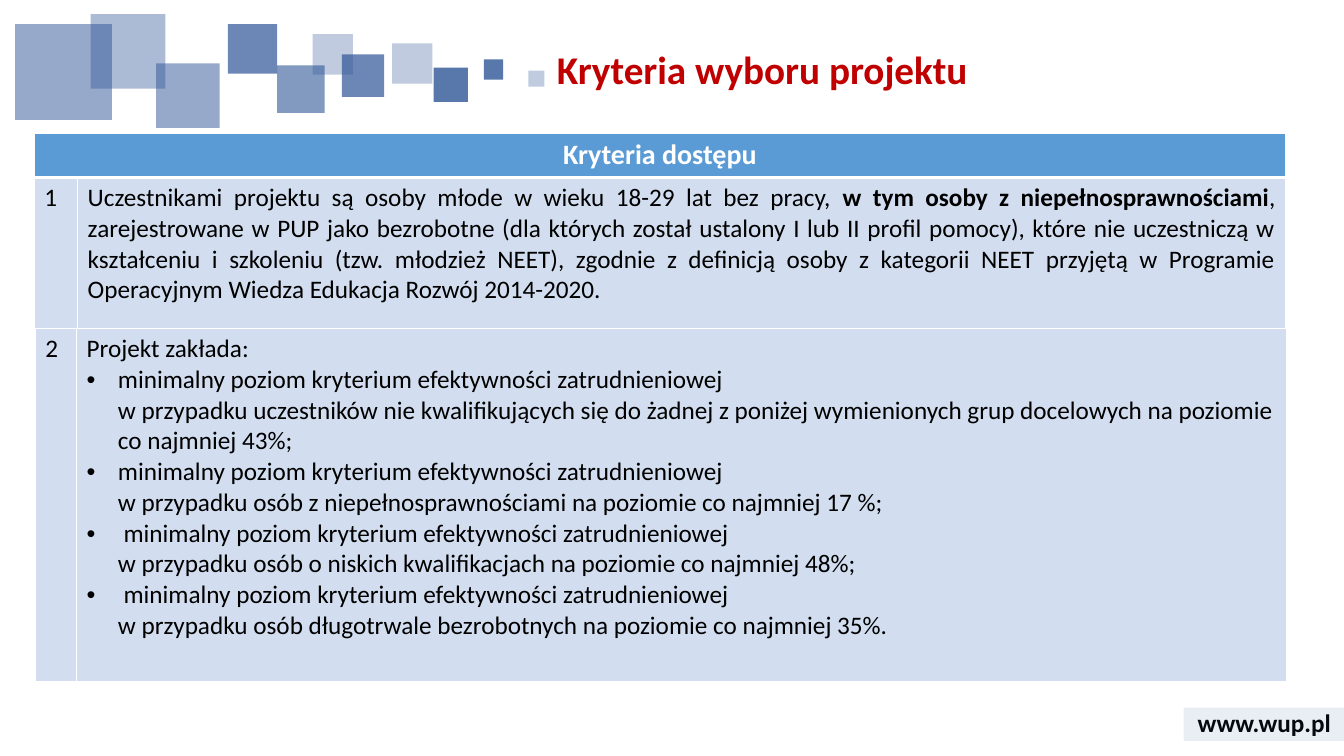
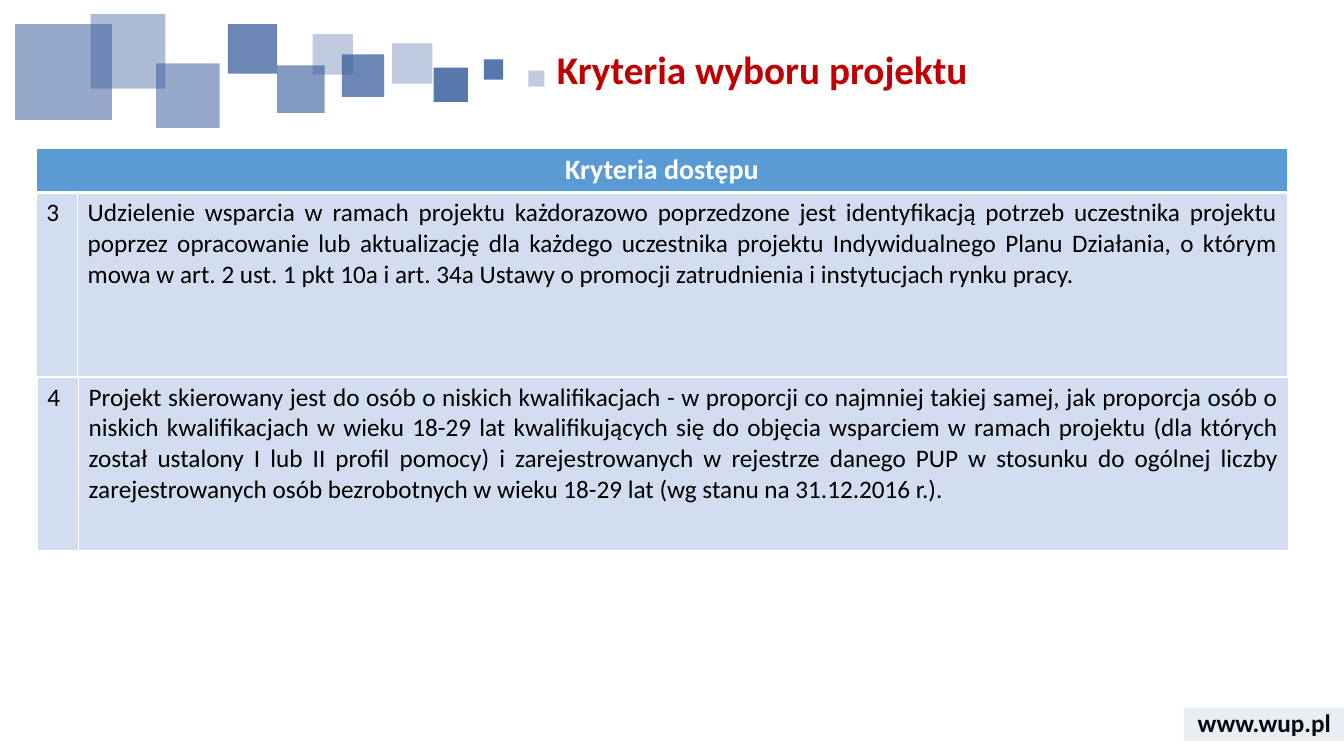
"""Builds two slides of project selection criteria."""
import dataclasses

import pptx
import pptx.dml.color
import pptx.enum.shapes
import pptx.enum.text
import pptx.oxml.ns
import pptx.util

qn = pptx.oxml.ns.qn
align = pptx.enum.text.PP_ALIGN
anchor = pptx.enum.text.MSO_ANCHOR
rect = pptx.enum.shapes.MSO_SHAPE.RECTANGLE
unit = pptx.util.Inches(0.1)


@dataclasses.dataclass
class Theme:
    face: str = "Calibri"
    red: str = "C00000"
    navy: str = "2F5597"
    blue: str = "5B9BD5"
    pale: str = "D2DEEF"
    white: str = "FFFFFF"
    black: str = "000000"
    title: int = 28
    head: int = 20
    body: int = 18


theme = Theme()


def add(root, tag, **attrs):
    node = root.makeelement(qn(tag), attrs)
    root.append(node)
    return node


def write(par, text, size, color, bold=False, side=align.LEFT):
    par.alignment = side
    for part, chunk in enumerate(text.split("|")):
        for row, line in enumerate(chunk.split("\n")):
            if row:
                par.add_line_break()
            run = par.add_run()
            run.text = line
            form = {"name": theme.face, "size": pptx.util.Pt(size), "bold": bold or part % 2 == 1}
            for key, value in form.items():
                setattr(run.font, key, value)
            run.font.color.rgb = pptx.dml.color.RGBColor.from_string(color)


squares = [
    (38.9, 4.3, 4, 4, 30),
    (43, 6.7, 3.4, 3.4, 80),
    (33.9, 5.4, 4.2, 4.2, 70),
    (1.5, 2.4, 9.6, 9.5, 50),
    (27.5, 6.5, 4.7, 4.7, 60),
    (15.5, 6.3, 6.3, 6.4, 50),
    (9, 1.4, 7.4, 7.4, 40),
    (48, 5.9, 1.9, 2, 80),
    (22.6, 2.4, 4.9, 4.9, 70),
    (31, 3.4, 4, 4, 30),
    (52.4, 7, 1.6, 1.6, 30),
    (117.4, 70.2, 16, 3.3, 10),
]
head = "Kryteria dostępu"
goal = "minimalny poziom kryterium efektywności zatrudnieniowej \nw przypadku "
pages = [
    [
        (3.4, 13.2, 4.3, 119.8, [
            (4.3, head, []),
            (15.1, "1", ["Uczestnikami projektu są osoby młode w wieku 18-29 lat bez pracy, "
                         "|w tym osoby z niepełnosprawnościami|, zarejestrowane w PUP jako bezrobotne "
                         "(dla których został ustalony I lub II profil pomocy), które nie uczestniczą "
                         "w kształceniu i szkoleniu (tzw. młodzież NEET), zgodnie z definicją osoby "
                         "z kategorii NEET przyjętą w Programie Operacyjnym Wiedza Edukacja Rozwój "
                         "2014-2020."]),
        ]),
        (3.5, 32.6, 4.1, 120, [
            (35, "2", ["Projekt zakłada:",
                       goal + "uczestników nie kwalifikujących się do żadnej z poniżej wymienionych "
                              "grup docelowych na poziomie co najmniej 43%;",
                       goal + "osób z niepełnosprawnościami na poziomie co najmniej 17 %;",
                       " " + goal + "osób o niskich kwalifikacjach na poziomie co najmniej 48%;",
                       " " + goal + "osób długotrwale bezrobotnych na poziomie co najmniej 35%."]),
        ]),
    ],
    [
        (3.6, 14.7, 4.1, 120, [
            (4.3, head, []),
            (18.3, "3", ["Udzielenie wsparcia w ramach projektu każdorazowo poprzedzone jest "
                         "identyfikacją potrzeb uczestnika projektu poprzez opracowanie lub "
                         "aktualizację dla każdego uczestnika projektu Indywidualnego Planu "
                         "Działania, o którym mowa w art. 2 ust. 1 pkt 10a i art. 34a Ustawy "
                         "o promocji zatrudnienia i instytucjach rynku pracy."]),
        ]),
        (3.7, 37.4, 4.1, 120, [
            (17.2, "4", ["Projekt skierowany jest do osób o niskich kwalifikacjach - w proporcji "
                         "co najmniej takiej samej, jak proporcja osób o niskich kwalifikacjach "
                         "w wieku 18-29 lat kwalifikujących się do objęcia wsparciem w ramach "
                         "projektu (dla których został ustalony I lub II profil pomocy) "
                         "i zarejestrowanych w rejestrze danego PUP w stosunku do ogólnej liczby "
                         "zarejestrowanych osób bezrobotnych w wieku 18-29 lat "
                         "(wg stanu na 31.12.2016 r.)."]),
        ]),
    ],
]

deck = pptx.Presentation()
deck.slide_width = pptx.util.Inches(13.33)
deck.slide_height = pptx.util.Inches(7.5)
base = deck.slide_layouts[5]
slides = [deck.slides.add_slide(base) for page in pages]

shapes = slides[0].shapes
site = shapes.add_textbox(*(int(n * unit) for n in (117.4, 69.7, 16, 4)))
site.text_frame.word_wrap = True
site.text_frame.vertical_anchor = anchor.MIDDLE
write(site.text_frame.paragraphs[0], "www.wup.pl", theme.body, theme.black, True, align.CENTER)
group = shapes.add_group_shape()
for *place, alpha in squares:
    home = shapes if alpha == 10 else group.shapes
    square = home.add_shape(rect, *(int(n * unit) for n in place))
    square.shadow.inherit = False
    square.line.fill.background()
    square.fill.solid()
    square.fill.fore_color.rgb = pptx.dml.color.RGBColor.from_string(theme.navy)
    for tint in square.element.iter(qn("a:srgbClr")):
        add(tint, "a:alpha", val=str(alpha * 1000))

for item in (site, group, square):
    base.shapes.element.append(item.element)
for num, node in enumerate(base.shapes.element.iter(qn("p:cNvPr")), 1):
    node.set("id", str(num))

for slide, page in zip(slides, pages):
    title = slide.shapes.title
    for key, value in {"left": 3.5, "top": 4.5, "width": 124.1, "height": 6.7}.items():
        setattr(title, key, int(value * unit))
    form = {"margin_left": int(21.1 * unit), "vertical_anchor": anchor.TOP,
            "word_wrap": True, "auto_size": pptx.enum.text.MSO_AUTO_SIZE.NONE}
    for key, value in form.items():
        setattr(title.text_frame, key, value)
    par = title.text_frame.paragraphs[0]
    par.line_spacing = 0.9
    write(par, "Kryteria wyboru projektu", theme.title, theme.red, True, align.CENTER)

    for left, top, thin, wide, rows in page:
        size = (left, top, thin + wide, sum(row[0] for row in rows))
        grid = slide.shapes.add_table(len(rows), 2, *(int(n * unit) for n in size)).table
        grid.first_row = grid.horz_banding = False
        for col, width in zip(grid.columns, (thin, wide)):
            col.width = int(width * unit)
        for at, (high, label, texts) in enumerate(rows):
            grid.rows[at].height = int(high * unit)
            first, last = grid.cell(at, 0), grid.cell(at, 1)
            for cell in (first, last):
                props = cell._tc.get_or_add_tcPr()
                for edge in "LRTB":
                    thick = len(rows) > 1 and (at, edge) in ((0, "B"), (1, "T"))
                    line = add(props, "a:ln" + edge, w=str(pptx.util.Pt(3 if thick else 1)))
                    add(add(line, "a:solidFill"), "a:srgbClr", val=theme.white)
                cell.fill.solid()
                shade = theme.pale if texts else theme.blue
                cell.fill.fore_color.rgb = pptx.dml.color.RGBColor.from_string(shade)
            par = first.text_frame.paragraphs[0]
            if not texts:
                first.merge(last)
                write(par, label, theme.head, theme.white, True, align.CENTER)
                continue
            write(par, label, theme.body, theme.black)
            frame = last.text_frame
            for num, text in enumerate(texts):
                par = frame.add_paragraph() if num else frame.paragraphs[0]
                if num:
                    props = par._p.get_or_add_pPr()
                    props.set("marL", str(int(3.1 * unit)))
                    props.set("indent", str(int(-3.1 * unit)))
                    add(props, "a:buFont", typeface="Arial")
                    add(props, "a:buChar", char="•")
                side = align.LEFT if len(texts) > 1 else align.JUSTIFY
                write(par, text, theme.body, theme.black, False, side)

deck.save("out.pptx")
